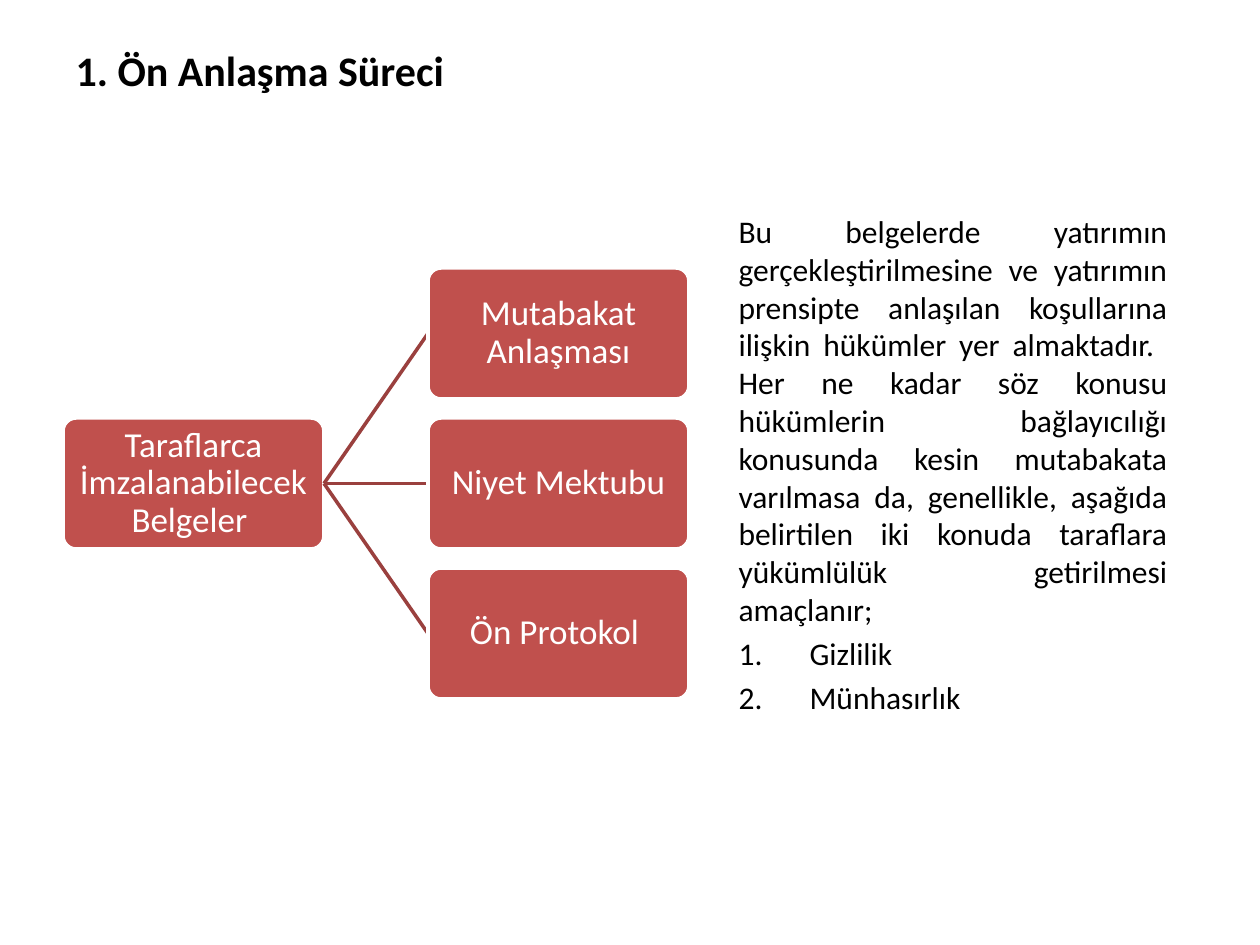
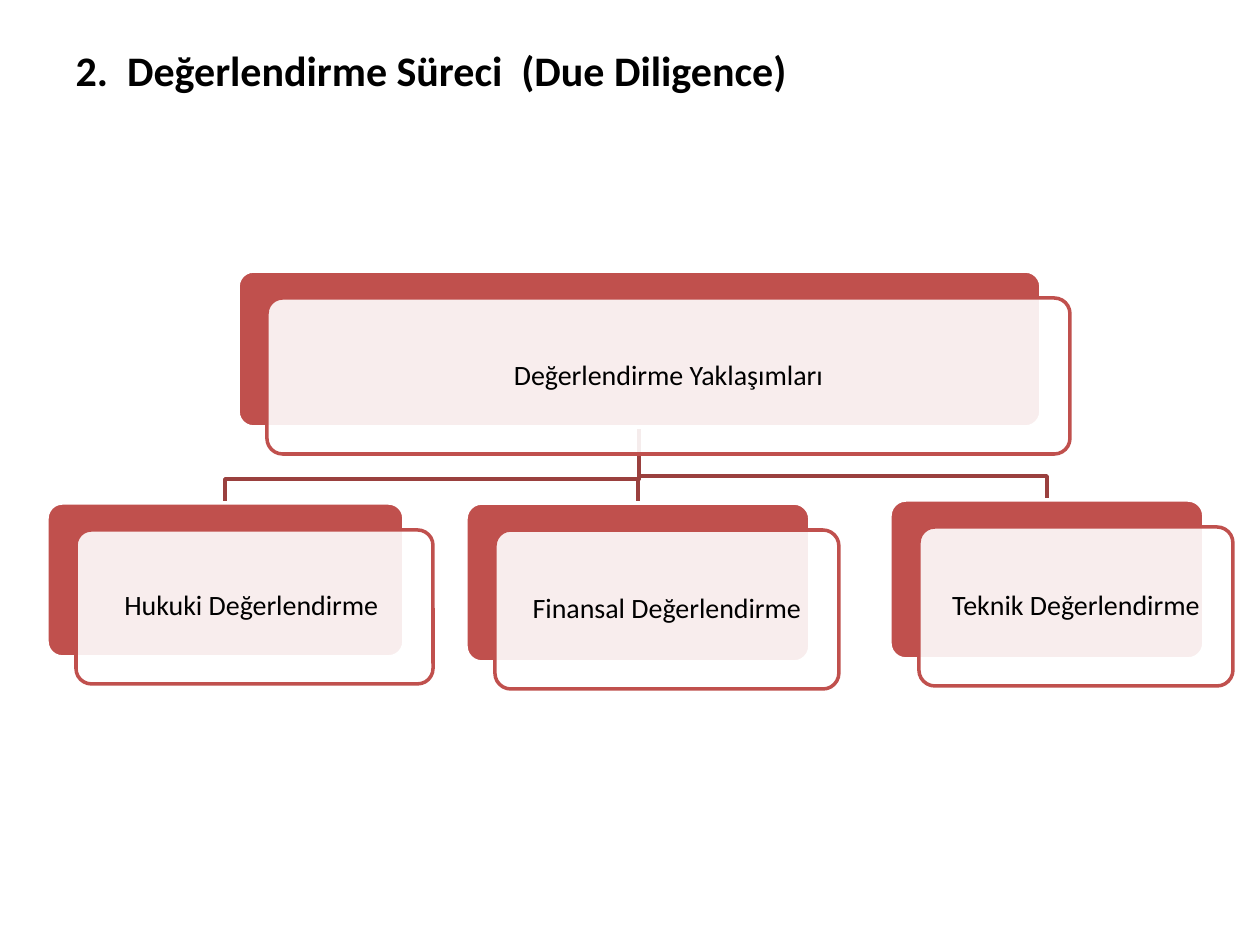
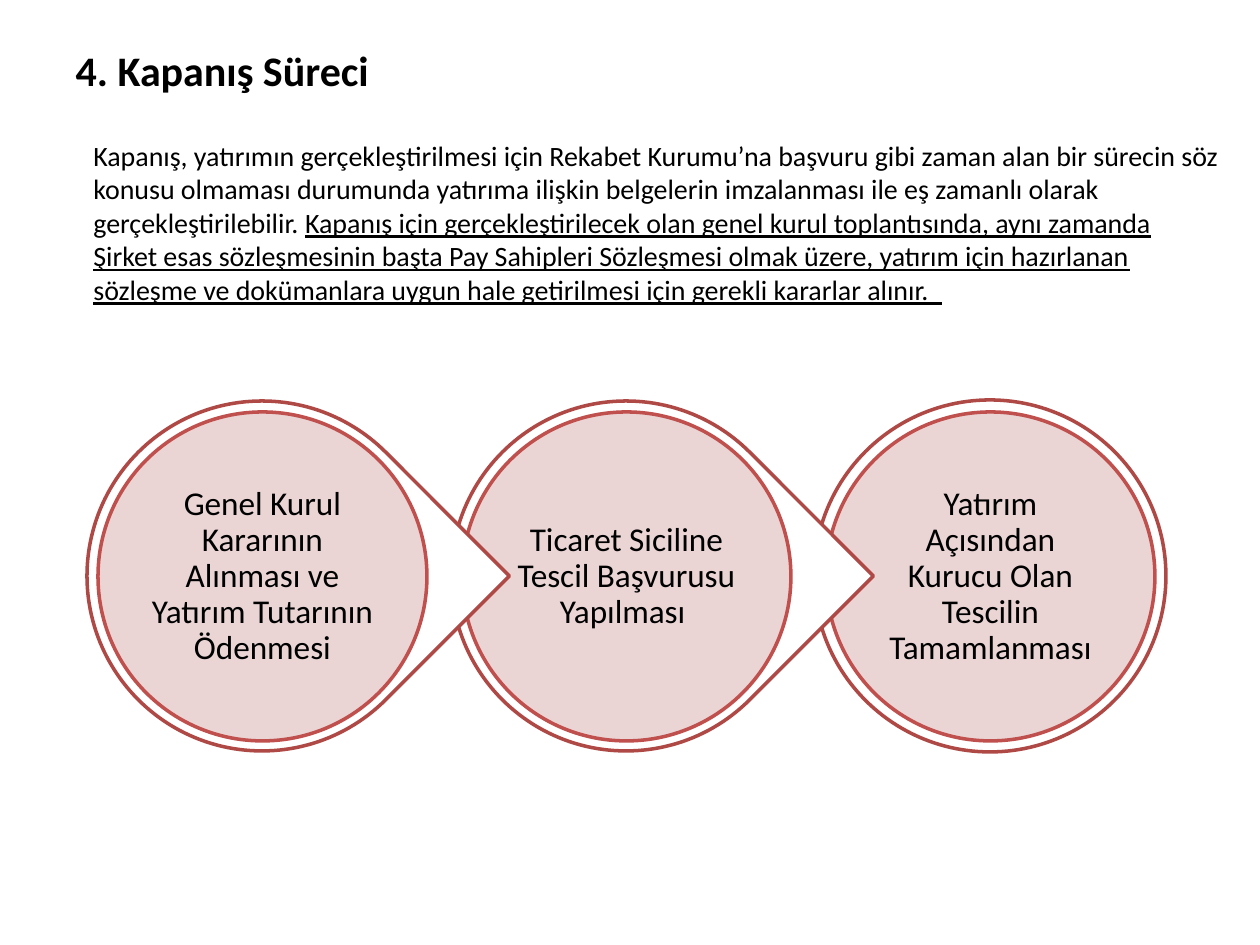
import pptx
import pptx.util
import pptx.dml.color
import pptx.enum.shapes
import pptx.enum.text
import pptx.oxml
import pptx.oxml.ns

PX = 914400 // 126  # one px in EMU
FONT = "Calibri"
COLORS = {"text": "000000", "white": "FFFFFF", "red": "C0504D", "link": "9A403E",
          "ring": "AE4946", "pink": "E8D0D0"}
SHAPE = pptx.enum.shapes.MSO_SHAPE
ALIGN = pptx.enum.text.PP_ALIGN
ANCHOR = pptx.enum.text.MSO_ANCHOR

# Content
AGREEMENT = {
    "title": "1. Ön Anlaşma Süreci",
    "root": "Taraflarca İmzalanabilecek Belgeler ",
    "documents": ["Mutabakat Anlaşması", "Niyet Mektubu", "Ön Protokol "],
    "body": "Bu belgelerde yatırımın gerçekleştirilmesine ve yatırımın prensipte anlaşılan "
            "koşullarına ilişkin hükümler yer almaktadır.  Her ne kadar söz konusu hükümlerin "
            "bağlayıcılığı konusunda kesin mutabakata varılmasa da, genellikle, aşağıda "
            "belirtilen iki konuda taraflara yükümlülük getirilmesi amaçlanır;",
    "duties": ["Gizlilik", "Münhasırlık"],
}
DILIGENCE = {
    "title": "2.  Değerlendirme Süreci  (Due Diligence)",
    "root": ("Değerlendirme Yaklaşımları", (238, 271, 803, 156)),
    "approaches": [
        ("Hukuki Değerlendirme ", (47, 503, 357, 154)),
        ("Finansal Değerlendirme", (466, 503, 344, 159)),
        ("Teknik Değerlendirme", (890, 500, 314, 159)),
    ],
}
CLOSING = {
    "title": "4. Kapanış Süreci",
    "intro": "Kapanış, yatırımın gerçekleştirilmesi için Rekabet Kurumu’na başvuru gibi zaman "
             "alan bir sürecin söz konusu olmaması durumunda yatırıma ilişkin belgelerin "
             "imzalanması ile eş zamanlı olarak gerçekleştirilebilir. ",
    "decision": "Kapanış için gerçekleştirilecek olan genel kurul toplantısında, aynı zamanda "
                "Şirket esas sözleşmesinin başta Pay Sahipleri Sözleşmesi olmak üzere, yatırım "
                "için hazırlanan sözleşme ve dokümanlara uygun hale getirilmesi için gerekli "
                "kararlar alınır.  ",
    "steps": ["Genel Kurul Kararının Alınması ve Yatırım Tutarının Ödenmesi",
              "Ticaret Siciline Tescil Başvurusu Yapılması ",
              "Yatırım Açısından Kurucu Olan Tescilin Tamamlanması"],
}


# Shared helpers
def px(*values):
    return [pptx.util.Emu(v * PX) for v in values]


def rgb(name):
    return pptx.dml.color.RGBColor.from_string(COLORS[name])


def place(sp, box):
    sp.left, sp.top, sp.width, sp.height = px(*box)


def write(p, text, size=18, color="text", bold=False, underline=None, align=None,
          spacing=None, before=None):
    r = p.add_run()
    r.text = text
    r.font.name, r.font.size = FONT, pptx.util.Pt(size)
    r.font.bold, r.font.underline = bold, underline
    r.font.color.rgb = rgb(color)
    if align is not None:
        p.alignment = align
    if spacing is not None:
        p.line_spacing = spacing
    if before is not None:
        p.space_before = pptx.util.Pt(before)


def set_bullet(p, tag, indent=0, **attrs):
    pPr = p._p.get_or_add_pPr()
    pPr.set("marL", str(indent * PX))
    pPr.set("indent", str(-indent * PX))
    bullet = pptx.oxml.parse_xml(f"<a:{tag} {pptx.oxml.ns.nsdecls('a')}/>")
    for key, value in attrs.items():
        bullet.set(key, value)
    pPr.append(bullet)


def style_line(sp, color):
    sp.line.color.rgb = rgb(color)
    sp.line.width = pptx.util.Pt(2)


def add_box(slide, kind, box, fill, line, alpha=None):
    sp = slide.shapes.add_shape(kind, *px(*box))
    sp.shadow.inherit = False
    sp.fill.solid()
    sp.fill.fore_color.rgb = rgb(fill)
    if alpha:
        color = sp.fill._xPr.find(".//" + pptx.oxml.ns.qn("a:srgbClr"))
        color.append(pptx.oxml.parse_xml(
            f'<a:alpha {pptx.oxml.ns.nsdecls("a")} val="{alpha * 1000}"/>'))
    style_line(sp, line)
    if kind == SHAPE.ROUNDED_RECTANGLE:
        sp.adjustments[0] = 0.1
    return sp


def label(sp, text, margin, **fmt):
    tf = sp.text_frame
    tf.word_wrap = True
    tf.vertical_anchor = ANCHOR.MIDDLE
    tf.margin_left, tf.margin_top, tf.margin_right, tf.margin_bottom = px(*[margin] * 4)
    write(tf.paragraphs[0], text, align=ALIGN.CENTER, spacing=0.9, **fmt)


def add_slide(prs, title, layout=5, title_height=158):
    slide = prs.slides.add_slide(prs.slide_layouts[layout])
    sp = slide.shapes.title
    place(sp, (63, 38, 1134, title_height))
    tf = sp.text_frame
    tf.auto_size = pptx.enum.text.MSO_AUTO_SIZE.NONE
    tf.vertical_anchor = ANCHOR.TOP
    write(tf.paragraphs[0], title, size=24, bold=True, align=ALIGN.LEFT)
    return slide


# Slide 1: documents tree and explanation
def build_agreement(prs):
    slide = add_slide(prs, AGREEMENT["title"], layout=1)
    body = slide.placeholders[1]
    place(body, (726, 155, 454, 743))
    tf = body.text_frame
    tf.auto_size = pptx.enum.text.MSO_AUTO_SIZE.NONE
    tf.margin_top = px(57)[0]
    p = tf.paragraphs[0]
    set_bullet(p, "buNone")
    write(p, AGREEMENT["body"], align=ALIGN.JUSTIFY, before=0)
    for duty in AGREEMENT["duties"]:
        p = tf.add_paragraph()
        set_bullet(p, "buAutoNum", indent=71, type="arabicPeriod")
        write(p, duty, align=ALIGN.JUSTIFY, before=3.6)

    w, h, top, pitch = 261, 131, 268, 150

    def add_node(text, x, row):
        sp = add_box(slide, SHAPE.ROUNDED_RECTANGLE, (x, top + row * pitch, w, h),
                     "red", "white")
        label(sp, text, 5, size=20, color="white")
        return sp

    root = add_node(AGREEMENT["root"], 63, 1)
    for row, text in enumerate(AGREEMENT["documents"]):
        link = slide.shapes.add_connector(pptx.enum.shapes.MSO_CONNECTOR.STRAIGHT, 0, 0, 0, 0)
        style_line(link, "link")
        link._element.spPr.append(
            pptx.oxml.parse_xml(f"<a:effectLst {pptx.oxml.ns.nsdecls('a')}/>"))
        link.begin_connect(root, 3)
        link.end_connect(add_node(text, 428, row), 1)


# Slide 2: layered cards under one heading card
def build_diligence(prs):
    slide = add_slide(prs, DILIGENCE["title"], title_height=84)
    root_x, root_y, root_w, root_h = DILIGENCE["root"][1]
    start_x, start_y = root_x + root_w // 2, root_y + root_h - 1
    for _, (x, y, w, h) in reversed(DILIGENCE["approaches"]):
        bend, end_x = y - 24, x + w // 2
        outline = slide.shapes.build_freeform(start_x, start_y, scale=PX)
        outline.add_line_segments([(start_x, bend), (end_x, bend), (end_x, y)], close=False)
        sp = outline.convert_to_shape()
        sp.shadow.inherit = False
        sp.fill.background()
        style_line(sp, "link")
    for text, (x, y, w, h) in [DILIGENCE["root"]] + DILIGENCE["approaches"]:
        add_box(slide, SHAPE.ROUNDED_RECTANGLE, (x, y, w, h), "red", "white")
        front = add_box(slide, SHAPE.ROUNDED_RECTANGLE, (x + 29, y + 27, w, h),
                        "white", "red", alpha=90)
        label(front, text, 13, size=16)


# Slide 3: closing steps as a chain of circles
def build_closing(prs):
    slide = add_slide(prs, CLOSING["title"])
    tf = slide.shapes.add_textbox(*px(81, 132, 1152, 183)).text_frame
    tf.word_wrap = True
    p = tf.paragraphs[0]
    write(p, CLOSING["intro"], size=16)
    write(p, CLOSING["decision"], size=16, underline=True)

    center_x, center_y, pitch = 262, 576, 364
    last = len(CLOSING["steps"]) - 1
    for i, text in reversed(list(enumerate(CLOSING["steps"]))):
        def circle_box(d):
            return center_x + i * pitch - d // 2, center_y - d // 2, d, d

        if i == last:
            add_box(slide, SHAPE.OVAL, circle_box(352), "white", "ring")
        else:
            add_box(slide, SHAPE.TEAR, circle_box(350), "white", "ring").rotation = 45
        disc = add_box(slide, SHAPE.OVAL, circle_box(329), "pink", "red", alpha=90)
        label(disc, text, 4, size=19)


def main():
    prs = pptx.Presentation()
    prs.slide_width, prs.slide_height = px(1260, 945)
    build_agreement(prs)
    build_diligence(prs)
    build_closing(prs)
    prs.save("out.pptx")


if __name__ == "__main__":
    main()
